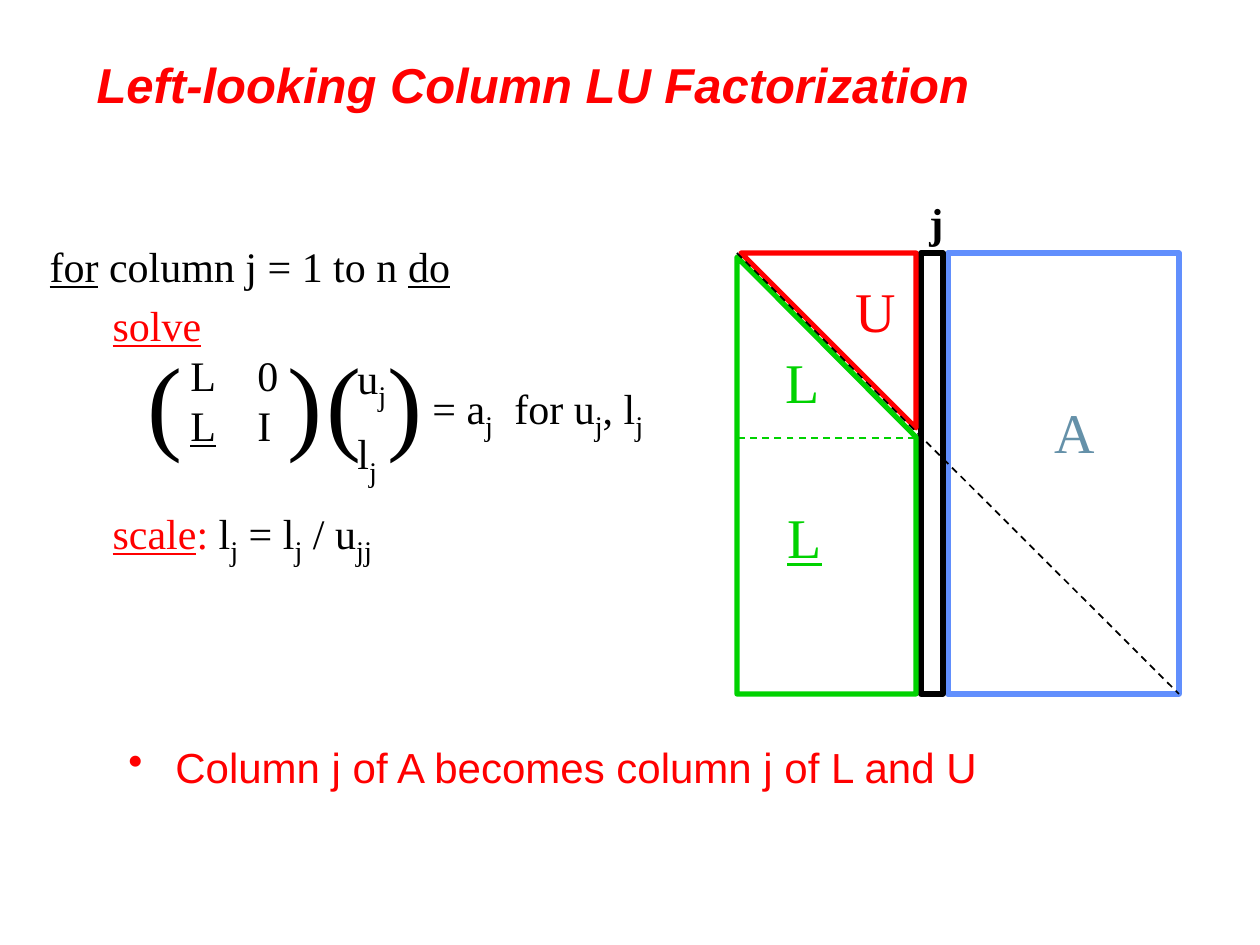
from lxml import etree
from pptx import Presentation
from pptx.dml.color import RGBColor
from pptx.enum.dml import MSO_LINE
from pptx.enum.shapes import MSO_CONNECTOR, MSO_SHAPE
from pptx.enum.text import MSO_ANCHOR, MSO_AUTO_SIZE, PP_ALIGN
from pptx.oxml.ns import qn
from pptx.util import Pt

DASH = MSO_LINE.DASH
STRAIGHT = MSO_CONNECTOR.STRAIGHT
RECTANGLE = MSO_SHAPE.RECTANGLE
LEFT = PP_ALIGN.LEFT
TOP, MIDDLE = MSO_ANCHOR.TOP, MSO_ANCHOR.MIDDLE
NO_AUTOFIT = MSO_AUTO_SIZE.NONE

PX = 914400 / 126  # EMU per px

THEME = {
    "red": "FF0000", "black": "000000", "green": "00D200",
    "blue": "618FFD", "steel": "6591A9",
    "heading": "Arial", "math": "Times New Roman",
    "title": 28, "text": 24, "sub": 28, "label": 32, "paren": 60,
    "thick": 3, "thin": 1,
}

# Content: a run is (text, style), u = underlined, r = red, s = subscript
TITLE = "Left-looking Column LU Factorization"
ALGORITHM = [  # margin, hanging indent, space before in pt, runs
    (48, 48, 5, [("for", "u"), (" column j = 1 to n ", ""), ("do", "u")]),
    (102, 39, 5, [("solve", "ur")]),
    (102, 39, 86, [("scale", "ur"), (": ", "r"), ("l", ""), ("j", "s"),
                   (" = l", ""), ("j", "s"), (" / u", ""), ("jj", "s")]),
]
CONCLUSION = "Column j of A becomes column j of L and U"
EQUATION = [  # box, tab stop, space between rows in pt, rows of runs
    ((178, 343, 113, 113), 67, 0,
     [[("L\t0", "")], [("L", "u"), ("\tI", "")]]),
    ((345, 339, 57, 122), None, 5,
     [[("u", ""), ("j", "s")], [("l", ""), ("j", "s")]]),
    ((420, 369, 239, 63), 82, 0,
     [[("= a", ""), ("j", "s"), ("\tfor u", ""), ("j", "s"),
       (", l", ""), ("j", "s")]]),
]
PARENS = [("(", 135), (")", 275), ("(", 314), (")", 375)]
PAREN_TOP, PAREN_W, PAREN_H = 330, 60, 139

# Matrix picture
MATRIX_TOP, MATRIX_BOTTOM = 253, 694
MATRIX_LEFT, MATRIX_RIGHT = 737, 1179
PANELS = [("blue", 948, MATRIX_RIGHT), ("black", 921, 943)]  # left, right
FACTORS = [
    ("green", [(737, 257), (737, 694), (916, 694), (916, 437)]),
    ("red", [(741, 253), (916, 253), (916, 428)]),
]
GUIDES = [
    ("black", (MATRIX_LEFT, MATRIX_TOP), (MATRIX_RIGHT, MATRIX_BOTTOM)),
    ("green", (915, 438), (737, 438)),
]
LABELS = [  # text, box, colour, size, bold, underline
    ("L", (775, 496, 59, 79), "green", "label", False, True),
    ("L", (773, 341, 59, 79), "green", "label", False, False),
    ("U", (843, 270, 66, 79), "red", "label", False, False),
    ("A", (1042, 391, 66, 79), "steel", "label", False, False),
    ("j", (917, 190, 39, 63), "black", "text", True, False),
]


def px(value):
    return round(value * PX)


def color(name):
    return RGBColor.from_string(THEME[name])


def set_font(font, face, size, ink):
    font.name = THEME[face]
    font.size = Pt(THEME[size])
    font.color.rgb = color(ink)


def place(shape, box):
    shape.left, shape.top, shape.width, shape.height = map(px, box)


def text_box(slide, box, wrap=False):
    frame = slide.shapes.add_textbox(*map(px, box)).text_frame
    frame.word_wrap = wrap
    return frame


def next_paragraph(frame, index):
    return frame.add_paragraph() if index else frame.paragraphs[0]


def write_runs(paragraph, runs):
    set_font(paragraph.font, "math", "text", "black")
    for text, style in runs:
        run = paragraph.add_run()
        run.text = text
        if "u" in style:
            run.font.underline = True
        if "r" in style:
            run.font.color.rgb = color("red")
        if "s" in style:
            run.font.size = Pt(THEME["sub"])
            run._r.get_or_add_rPr().set("baseline", "-25000")


def paragraph_props(paragraph, margin, hanging, bullet=None):
    props = paragraph._p.get_or_add_pPr()
    props.set("marL", str(px(margin)))
    props.set("indent", str(-px(hanging)))
    mark = etree.Element(qn("a:buChar" if bullet else "a:buNone"))
    if bullet:
        mark.set("char", bullet)
    props.insert_element_before(mark, "a:tabLst", "a:defRPr", "a:extLst")


def add_tab(paragraph, position):
    tabs = etree.Element(qn("a:tabLst"))
    etree.SubElement(tabs, qn("a:tab"), pos=str(px(position)), algn="l")
    paragraph._p.get_or_add_pPr().insert_element_before(
        tabs, "a:defRPr", "a:extLst")


def outline(shape, ink):
    shape.shadow.inherit = False
    shape.fill.background()
    shape.line.color.rgb = color(ink)
    shape.line.width = Pt(THEME["thick"])


def add_title_and_algorithm(slide):
    title, body = slide.shapes.title, slide.placeholders[1]
    place(title, (84, 42, 1032, 84))
    place(body, (37, 234, 630, 473))
    for holder, anchor in ((title, MIDDLE), (body, TOP)):
        holder.text_frame.auto_size = NO_AUTOFIT
        holder.text_frame.vertical_anchor = anchor
    title.text_frame.text = TITLE
    heading = title.text_frame.paragraphs[0]
    heading.alignment = LEFT
    set_font(heading.font, "heading", "title", "red")
    heading.font.bold = heading.font.italic = True
    for i, (margin, hanging, before, runs) in enumerate(ALGORITHM):
        step = next_paragraph(body.text_frame, i)
        step.level = min(i, 1)
        step.space_before = Pt(before)
        write_runs(step, runs)
        paragraph_props(step, margin, hanging)


def add_conclusion(slide):
    point = text_box(slide, (116, 735, 935, 95), wrap=True).paragraphs[0]
    point.text = CONCLUSION
    point.space_before = Pt(5)
    set_font(point.font, "heading", "text", "red")
    paragraph_props(point, 47, 47, "•")


def add_equation(slide):
    for box, tab, gap, rows in EQUATION:
        frame = text_box(slide, box)
        for i, runs in enumerate(rows):
            row = next_paragraph(frame, i)
            row.space_before = Pt(gap if i else 0)
            write_runs(row, runs)
            if tab:
                add_tab(row, tab)
    for sign, left in PARENS:
        paren = text_box(slide, (left, PAREN_TOP, PAREN_W, PAREN_H)).paragraphs[0]
        paren.text = sign
        set_font(paren.font, "math", "paren", "black")


def add_matrix(slide):
    # Panels for A and column j
    for ink, left, right in PANELS:
        box = (left, MATRIX_TOP, right - left, MATRIX_BOTTOM - MATRIX_TOP)
        outline(slide.shapes.add_shape(RECTANGLE, *map(px, box)), ink)
    # Outlines of L and U
    for ink, (start, *corners) in FACTORS:
        builder = slide.shapes.build_freeform(*start, scale=PX)
        builder.add_line_segments(corners, close=True)
        outline(builder.convert_to_shape(), ink)
    # Diagonal and split of L
    for ink, start, end in GUIDES:
        guide = slide.shapes.add_connector(STRAIGHT, *map(px, start + end))
        guide.line.color.rgb = color(ink)
        guide.line.width = Pt(THEME["thin"])
        guide.line.dash_style = DASH
        etree.SubElement(guide._element.spPr, qn("a:effectLst"))
    for text, box, ink, size, bold, underline in LABELS:
        label = text_box(slide, box).paragraphs[0]
        label.text = text
        set_font(label.font, "math", size, ink)
        label.font.bold, label.font.underline = bold, underline


def main():
    deck = Presentation()
    deck.slide_width, deck.slide_height = px(1260), px(945)
    slide = deck.slides.add_slide(deck.slide_layouts[1])
    add_title_and_algorithm(slide)
    add_conclusion(slide)
    add_equation(slide)
    add_matrix(slide)
    deck.save("out.pptx")


if __name__ == "__main__":
    main()
